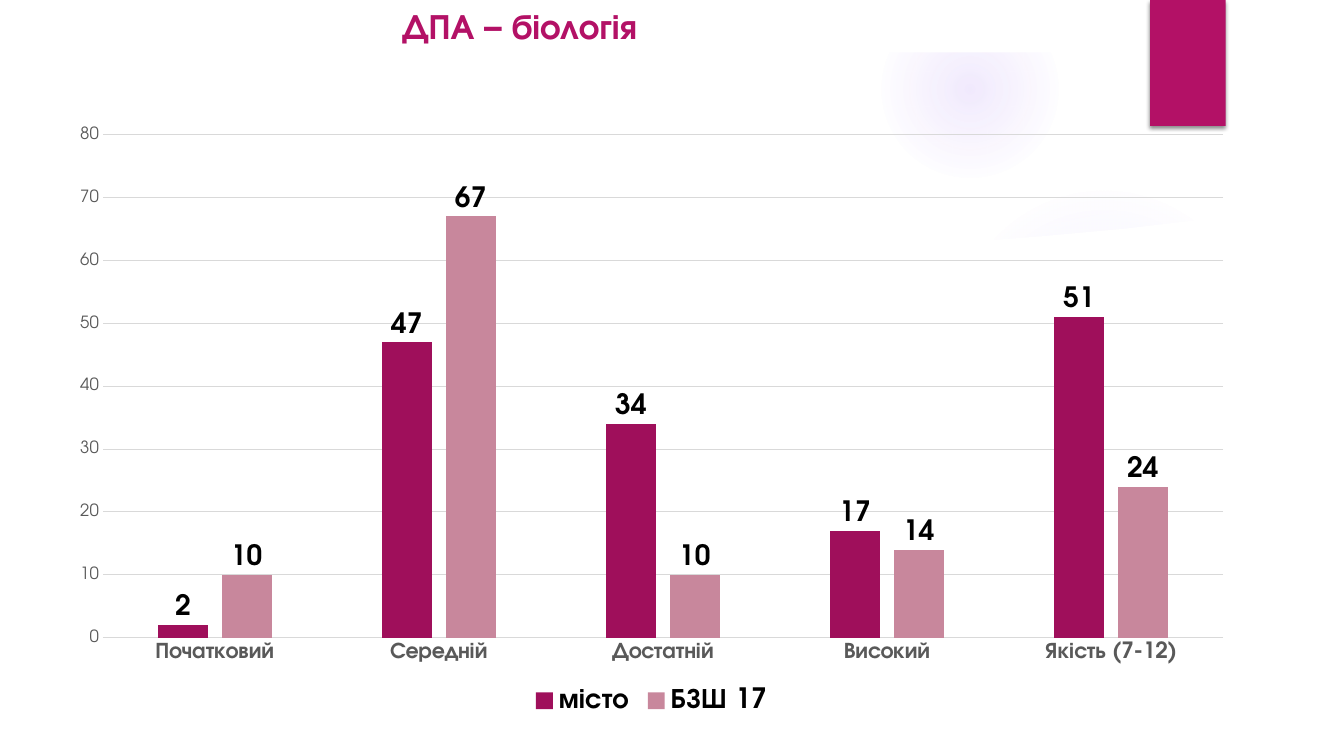
from pptx import Presentation
from pptx.chart.data import CategoryChartData
from pptx.dml.color import RGBColor
from pptx.enum.chart import XL_CHART_TYPE, XL_LABEL_POSITION, XL_LEGEND_POSITION, XL_TICK_MARK
from pptx.enum.shapes import MSO_SHAPE
from pptx.enum.text import MSO_ANCHOR, MSO_AUTO_SIZE, PP_ALIGN
from pptx.oxml import parse_xml
from pptx.oxml.ns import nsdecls, qn
from pptx.util import Pt

FONT = "TeX Gyre Adventor"
MAGENTA = "B31166"
WHITE = "FFFFFF"
GREY = "595959"
GRID = "D9D9D9"
LEVELS = ["Початковий", "Середній", "Достатній", "Високий", "Якість (7-12)"]
RESULTS = [
    ("місто", [2, 47, 34, 17, 51], "9F0F5B"),
    ("БЗШ 17", [10, 67, 10, 14, 24], "C8879C"),
]
SWOOSH = [(672.5, 180), (750, 178), (928, 154), (923.8, 119.5),
          (864, 135), (797.8, 150.5), (727.2, 164.9), (669.6, 175)]
PANEL = [(924.5, 146.9), (864, 156.2), (803.5, 163.4), (743, 168.9),
         (683.3, 173.5), (624.2, 176.4), (564.5, 177.5), (491, 178.6),
         (402, 177.1), (319.7, 173.5), (231.1, 167.8), (134.6, 159.1),
         (67.7, 151.2), (36, 146.9), (36, 504), (924.5, 504)]


def rgb(code):
    return RGBColor.from_string(code)


def style_font(font, size, color, bold=False):
    values = {"name": FONT, "size": Pt(size), "bold": bold}
    for attribute, value in values.items():
        setattr(font, attribute, value)
    font.color.rgb = rgb(color)


def paint(shape, color):
    shape.fill.solid()
    shape.fill.fore_color.rgb = rgb(color)
    shape.line.fill.background()
    shape.shadow.inherit = False
    return shape


def add_block(slide, left, top, width, height, color):
    block = slide.shapes.add_shape(
        MSO_SHAPE.RECTANGLE, Pt(left), Pt(top), Pt(width), Pt(height))
    return paint(block, color)


def add_outline(slide, points, color):
    corners = [(Pt(x), Pt(y)) for x, y in points]
    builder = slide.shapes.build_freeform(*corners[0], scale=1.0)
    builder.add_line_segments(corners[1:], close=True)
    return paint(builder.convert_to_shape(), color)


def add_glow(slide, left, top, size, stops):
    glow = slide.shapes.add_shape(
        MSO_SHAPE.OVAL, Pt(left), Pt(top), Pt(size), Pt(size))
    paint(glow, WHITE)
    steps = "".join(
        f'<a:gs pos="{position * 1000}"><a:srgbClr val="9B6BF2">'
        f'<a:alpha val="{opacity * 1000}"/></a:srgbClr></a:gs>'
        for position, opacity in stops)
    gradient = parse_xml(
        f'<a:gradFill {nsdecls("a")}><a:gsLst>{steps}</a:gsLst>'
        '<a:path path="circle"><a:fillToRect l="50000" t="50000" r="50000" b="50000"/>'
        '</a:path></a:gradFill>')
    properties = glow.element.spPr
    properties.replace(properties.find(qn("a:solidFill")), gradient)


def set_opacity(shape, percent):
    color = shape.element.spPr.find(qn("a:solidFill"))[0]
    color.append(parse_xml(f'<a:alpha {nsdecls("a")} val="{percent * 1000}"/>'))


def add_drop_shadow(shape):
    shape.element.spPr.find(qn("a:effectLst")).append(parse_xml(
        f'<a:outerShdw {nsdecls("a")} blurRad="{Pt(3)}" dist="{Pt(2)}" dir="5400000" '
        'rotWithShape="0"><a:srgbClr val="000000"><a:alpha val="45000"/>'
        '</a:srgbClr></a:outerShdw>'))


def add_backdrop(slide):
    add_glow(slide, 677.5, 131.8, 221.8, [(0, 7), (36, 6), (69, 0)])
    add_glow(slide, 630, 0.7, 126, [(0, 14), (36, 7), (73, 0)])
    set_opacity(add_outline(slide, SWOOSH, WHITE), 20)
    add_outline(slide, PANEL, WHITE)
    add_block(slide, 0, 0, 960, 37.4, WHITE)
    add_drop_shadow(add_block(slide, 821.5, 0, 54, 90, MAGENTA))


def set_title(slide, text):
    title = slide.shapes.title
    place = {"left": Pt(280), "top": Pt(0), "width": Pt(389.5), "height": Pt(36)}
    for attribute, value in place.items():
        setattr(title, attribute, value)
    frame = title.text_frame
    frame.text = text
    layout = {"word_wrap": True, "auto_size": MSO_AUTO_SIZE.NONE,
              "vertical_anchor": MSO_ANCHOR.MIDDLE}
    for attribute, value in layout.items():
        setattr(frame, attribute, value)
    heading = frame.paragraphs[0]
    heading.alignment = PP_ALIGN.LEFT
    style_font(heading.runs[0].font, 25.2, MAGENTA, True)
    title.element.getparent().append(title.element)


def style_axis(axis, size, bold):
    axis.major_tick_mark = axis.minor_tick_mark = XL_TICK_MARK.NONE
    style_font(axis.tick_labels.font, size, GREY, bold)


def style_line(line):
    line.color.rgb = rgb(GRID)
    line.width = Pt(0.75)


def style_series(series, color):
    series.format.fill.solid()
    series.format.fill.fore_color.rgb = rgb(color)
    series.invert_if_negative = False
    labels = series.data_labels
    labels.show_value = True
    labels.position = XL_LABEL_POSITION.OUTSIDE_END
    style_font(labels.font, 20, "000000", True)


def add_results_chart(slide):
    data = CategoryChartData()
    data.categories = LEVELS
    for name, values, _ in RESULTS:
        data.add_series(name, values)
    chart = slide.shapes.add_chart(
        XL_CHART_TYPE.COLUMN_CLUSTERED, Pt(40.3), Pt(82), Pt(850.3), Pt(432), data).chart
    style_font(chart.font, 10, "000000")
    chart.has_title = False
    chart.has_legend = True
    chart.legend.position = XL_LEGEND_POSITION.BOTTOM
    chart.legend.include_in_layout = False
    style_font(chart.legend.font, 20, "000000", True)

    style_axis(chart.category_axis, 16, True)
    style_line(chart.category_axis.format.line)
    scale = chart.value_axis
    style_axis(scale, 12, False)
    limits = {"minimum_scale": 0, "maximum_scale": 80, "major_unit": 10}
    for attribute, value in limits.items():
        setattr(scale, attribute, value)
    scale.format.line.fill.background()
    style_line(scale.major_gridlines.format.line)

    columns = chart.plots[0]
    columns.gap_width = 219
    columns.overlap = -27
    columns.vary_by_categories = False
    for series, (_, _, color) in zip(columns.series, RESULTS):
        style_series(series, color)


def main():
    presentation = Presentation()
    presentation.slide_width = Pt(960)
    presentation.slide_height = Pt(540)
    slide = presentation.slides.add_slide(presentation.slide_layouts[5])
    add_backdrop(slide)
    set_title(slide, "ДПА – біологія")
    add_results_chart(slide)
    presentation.save("out.pptx")


if __name__ == "__main__":
    main()
